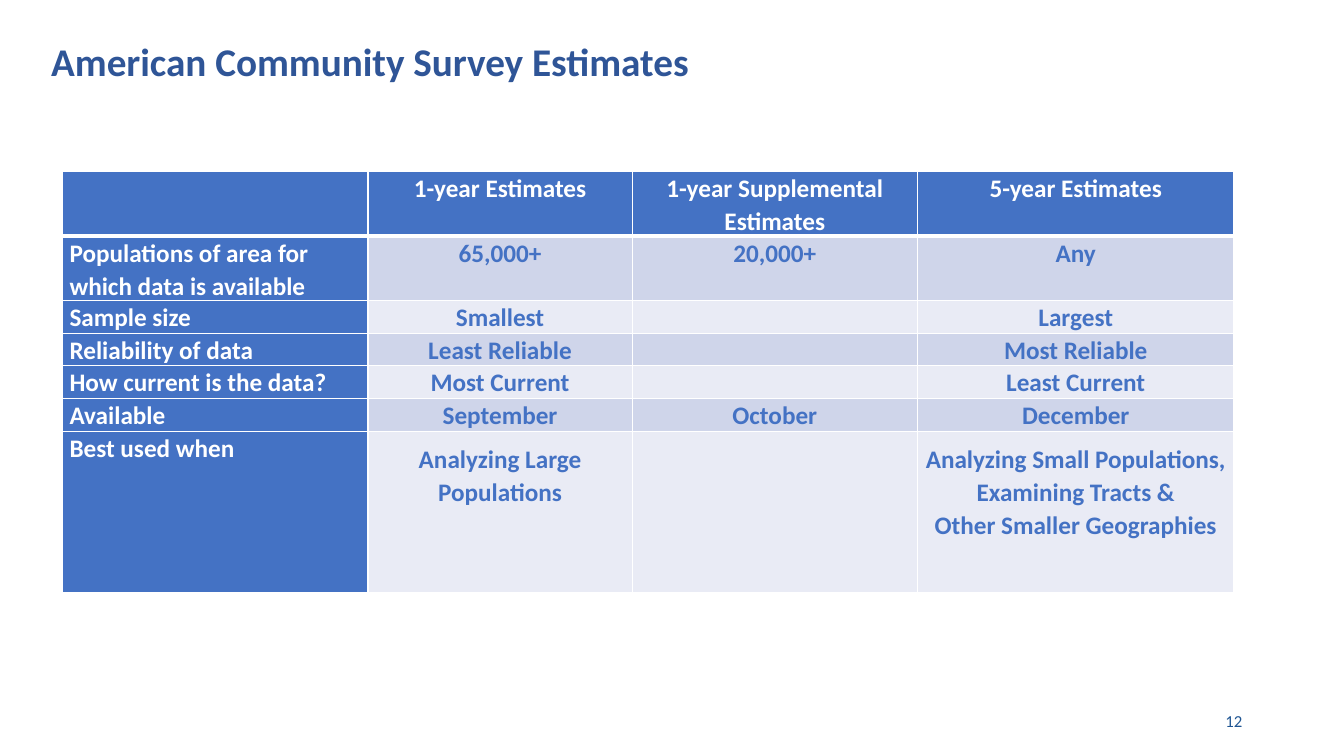
"""Builds the American Community Survey estimates slide."""
from lxml import etree
from pptx import Presentation
from pptx.dml.color import RGBColor
from pptx.enum.text import MSO_ANCHOR, PP_ALIGN
from pptx.oxml.ns import qn
from pptx.util import Pt

LEFT, MID, RIGHT = PP_ALIGN.LEFT, PP_ALIGN.CENTER, PP_ALIGN.RIGHT
CENTER = MSO_ANCHOR.MIDDLE
PX = 9144
HEX = {"title": "2F5597", "page": "1F5593", "blue": "4472C4",
       "dark": "CFD5EA", "light": "E9EBF5", "white": "FFFFFF"}
WIDTHS = [303, 262, 283, 314]
HEIGHTS = [59, 59, 29, 29, 33, 29, 160]
ROWS = [
    ["", "1-year Estimates", "1-year Supplemental Estimates", "5-year Estimates"],
    ["Populations of area for which data is available", "65,000+", "20,000+", "Any"],
    ["Sample size", "Smallest", "", "Largest"],
    ["Reliability of data", "Least Reliable", "", "Most Reliable"],
    ["How current is the data?", "Most Current", "", "Least Current"],
    ["Available", "September", "October", "December"],
    ["Best used when", "Analyzing Large Populations", "",
     "Analyzing Small Populations,\nExamining Tracts &\nOther Smaller Geographies"],
]


def style(frame, text, size, color, bold, align, gap):
    frame.text = text
    frame.word_wrap = True
    for para in frame.paragraphs:
        para.alignment = align
        para.line_spacing = gap
        font = para.font
        font.name, font.size, font.bold = "Calibri", Pt(size), bold
        font.color.rgb = RGBColor.from_string(HEX[color])


def edge(cell, side, width):
    line = etree.Element(qn("a:" + side), w=str(Pt(width)))
    fill = etree.SubElement(line, qn("a:solidFill"))
    etree.SubElement(fill, qn("a:srgbClr"), val=HEX["white"])
    return line


deck = Presentation()
deck.slide_width, deck.slide_height = 1333 * PX, 750 * PX
slide = deck.slides.add_slide(deck.slide_layouts[6])

for box, text, size, color, bold, align, gap in [
    ((41, 40, 787, 47), "American Community Survey Estimates", 28, "title", True, LEFT, 0.9),
    ((942, 695, 300, 40), "12", 12, "page", False, RIGHT, 1.0),
]:
    frame = slide.shapes.add_textbox(*[n * PX for n in box]).text_frame
    frame.vertical_anchor = CENTER
    style(frame, text, size, color, bold, align, gap)

table = slide.shapes.add_table(len(ROWS), len(WIDTHS), 62 * PX, 170 * PX,
                               sum(WIDTHS) * PX, sum(HEIGHTS) * PX).table
for col, width in zip(table.columns, WIDTHS):
    col.width = width * PX
for row, height in zip(table.rows, HEIGHTS):
    row.height = height * PX

for r, words in enumerate(ROWS):
    for c, text in enumerate(words):
        cell = table.cell(r, c)
        head = r == 0 or c == 0
        cell.margin_left = cell.margin_right = 7 * PX
        cell.margin_top = 11 * PX if r == len(ROWS) - 1 and c else 0
        cell.margin_bottom = 0
        style(cell.text_frame, text, 18, "white" if head else "blue", True,
              MID if c else LEFT, 1.07)
        cell.fill.solid()
        tone = "blue" if head else "dark" if r % 2 else "light"
        cell.fill.fore_color.rgb = RGBColor.from_string(HEX[tone])
        props = cell._tc.get_or_add_tcPr()
        for i, side in enumerate(["lnL", "lnR", "lnT", "lnB"]):
            thick = (r, side) in [(0, "lnB"), (1, "lnT")]
            props.insert(i, edge(cell, side, 3 if thick else 1))

deck.save("out.pptx")
